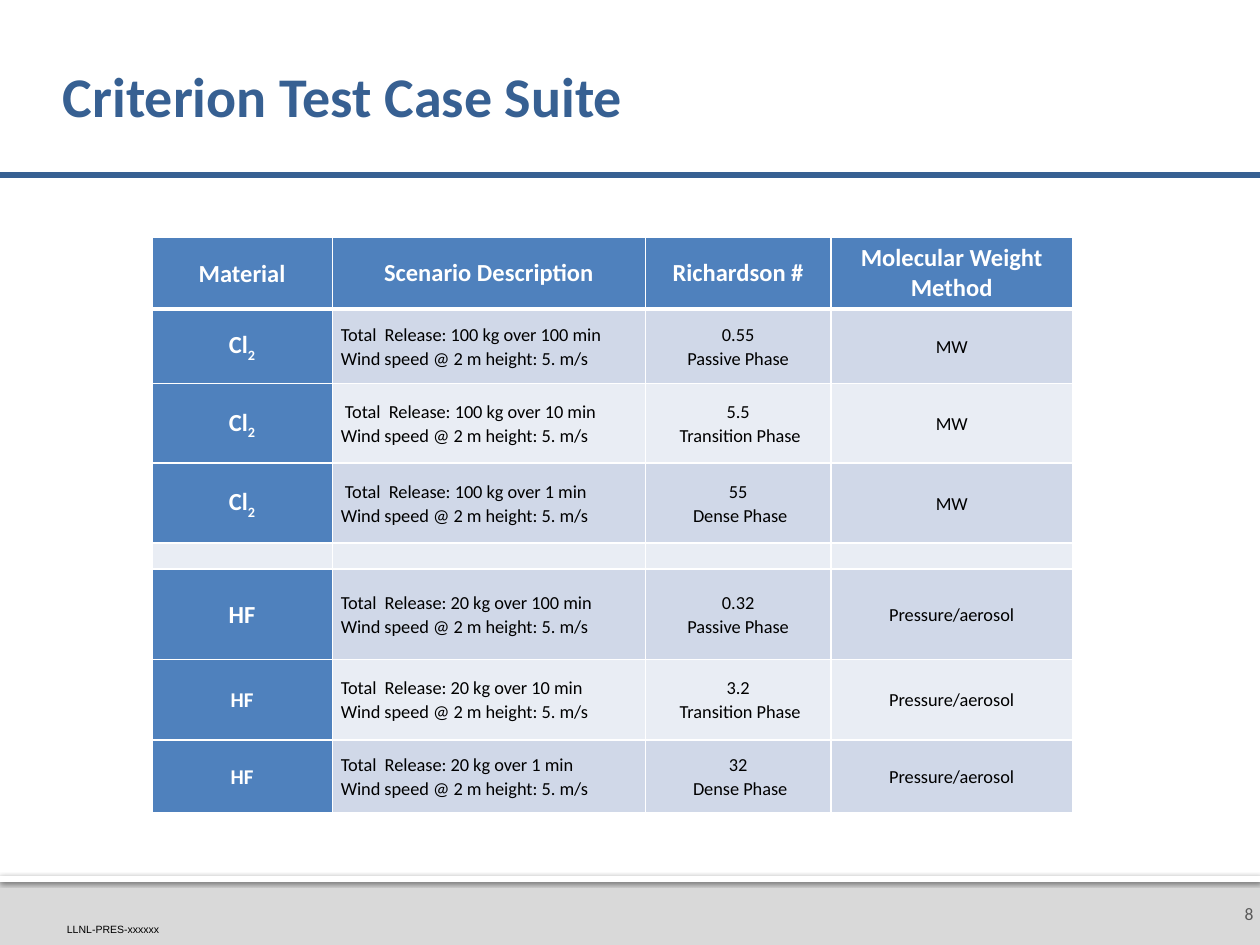
"""Build a slide with the table of criterion test cases."""
from lxml.etree import SubElement as Sub
from pptx import Presentation
from pptx.dml.color import RGBColor as Rgb
from pptx.enum.shapes import MSO_CONNECTOR as Link, MSO_SHAPE as Kind
from pptx.enum.text import MSO_ANCHOR as Anchor, PP_ALIGN as Align
from pptx.oxml.ns import qn
from pptx.util import Cm, Pt

HUES = {"white": "FFFFFF", "black": "000000", "navy": "376092", "head": "4F81BD",
        "dark": "D0D8E8", "light": "E9EDF4", "foot": "D9D9D9", "gray": "595959"}
TITLE = "Criterion Test Case Suite"
HEADS = ["Material", "Scenario Description", "Richardson #", "Molecular Weight Method"]
WIND = "Wind speed @ 2 m height: 5. m/s"
CASES = [
    (1.5, 14, ("Cl", "2"), "Total  Release: 100 kg over 100 min", "0.55", "Passive Phase", "MW"),
    (1.61, 14, ("Cl", "2"), " Total  Release: 100 kg over 10 min", "5.5", " Transition Phase", "MW"),
    (1.61, 14, ("Cl", "2"), " Total  Release: 100 kg over 1 min", "55", " Dense Phase", "MW"),
    None,
    (1.83, 14, ("HF",), "Total  Release: 20 kg over 100 min", "0.32", "Passive Phase",
     "Pressure/aerosol"),
    (1.62, 12, ("HF",), "Total  Release: 20 kg over 10 min", "3.2", " Transition Phase",
     "Pressure/aerosol"),
    (1.47, 12, ("HF",), "Total  Release: 20 kg over 1 min", "32", " Dense Phase",
     "Pressure/aerosol"),
]
WIDTHS = [3.64, 6.31, 3.74, 4.87]
HEAD_H, GAP_H = 1.44, 0.52
PAD, TIGHT = (0.25, 0.13, 0.25, 0.13), (0.17, 0, 0.17, 0)


def tint(name):
    return Rgb.from_string(HUES[name])


def inset(part, pad):
    part.margin_left, part.margin_top, part.margin_right, part.margin_bottom = map(Cm, pad)


def write(frame, lines, size, hue, bold=False, align=Align.LEFT, gap=None, face="Calibri"):
    for i, runs in enumerate(lines):
        para = frame.add_paragraph() if i else frame.paragraphs[0]
        para.alignment = align
        if gap:
            para.line_spacing = gap
        for j, word in enumerate(runs):
            run = para.add_run()
            run.text = word
            font = run.font
            font.size, font.name, font.bold = Pt(size), face, bold
            font.color.rgb = tint(hue)
            if j:
                font._element.set("baseline", "-25000")


def label(slide, box, text, size, hue, anchor, pad, **style):
    frame = slide.shapes.add_textbox(*map(Cm, box)).text_frame
    frame.word_wrap = True
    frame.vertical_anchor = anchor
    inset(frame, pad)
    write(frame, [(text,)], size, hue, **style)


def band(slide, high, hue):
    bar = slide.shapes.add_shape(Kind.RECTANGLE, 0, Cm(17.65), Cm(25.4), Cm(high))
    bar.shadow.inherit = False
    bar.fill.solid()
    bar.fill.fore_color.rgb = tint(hue)
    bar.line.fill.background()
    return bar


def shade(bar):
    glow = Sub(bar._element.spPr.find(qn("a:effectLst")), qn("a:outerShdw"),
               blurRad=str(Pt(2.5)), dist=str(Pt(0.8)), dir="5400000", rotWithShape="0")
    hue = Sub(glow, qn("a:srgbClr"), val=HUES["black"])
    Sub(hue, qn("a:alpha"), val="60000")


def paint(cell, hue, low):
    props = cell._tc.get_or_add_tcPr()
    for side in "LRTB":
        edge = Sub(props, qn(f"a:ln{side}"), w=str(Pt(low if side == "B" else 1)))
        Sub(Sub(edge, qn("a:solidFill")), qn("a:srgbClr"), val=HUES["white"])
    cell.fill.solid()
    cell.fill.fore_color.rgb = tint(hue)
    cell.vertical_anchor = Anchor.MIDDLE


def fill_head(grid):
    for c, text in enumerate(HEADS):
        cell = grid.cell(0, c)
        paint(cell, "head", 3)
        inset(cell, PAD if c else TIGHT)
        write(cell.text_frame, [(text,)], 14, "white", True, Align.CENTER, None if c else 1.07)


def fill_case(grid, r, case):
    cells = [grid.cell(r, c) for c in range(len(WIDTHS))]
    for c, cell in enumerate(cells):
        paint(cell, "head" if case and c == 0 else "dark" if r % 2 else "light", 1)
        inset(cell, TIGHT)
        if not case:
            Sub(cell.text_frame.paragraphs[0]._p, qn("a:endParaRPr"), sz="1050")
    if case:
        _, size, name, load, rich, phase, way = case
        write(cells[0].text_frame, [name], size, "white", True, Align.CENTER, 1.07)
        write(cells[1].text_frame, [(load,), (WIND,)], 10.5, "black", gap=1.07)
        for cell, lines in zip(cells[2:], ([(rich,), (phase,)], [(way,)])):
            write(cell.text_frame, lines, 10.5, "black", False, Align.CENTER, 1.07)


def add_grid(slide):
    highs = [HEAD_H] + [case[0] if case else GAP_H for case in CASES]
    grid = slide.shapes.add_table(len(highs), len(WIDTHS), Cm(3.06), Cm(4.78),
                                  Cm(sum(WIDTHS)), Cm(sum(highs))).table
    for col, wide in zip(grid.columns, WIDTHS):
        col.width = Cm(wide)
    for row, high in zip(grid.rows, highs):
        row.height = Cm(high)
    fill_head(grid)
    for r, case in enumerate(CASES, 1):
        fill_case(grid, r, case)


def main():
    deck = Presentation()
    deck.slide_width, deck.slide_height = Cm(25.4), Cm(19.05)
    slide = deck.slides.add_slide(deck.slide_layouts[6])
    band(slide, 1.4, "foot")
    shade(band(slide, 0.13, "white"))
    label(slide, (24.51, 17.78, 0.89, 1.27), "8", 10, "gray", Anchor.MIDDLE,
          (0.25, 0.13, 0.13, 0.13), align=Align.RIGHT)
    label(slide, (1.35, 18.62, 2.44, 0.25), "LLNL-PRES-xxxxxx", 6, "black", Anchor.BOTTOM,
          (0, 0, 0, 0), face="Arial")
    rule = slide.shapes.add_connector(Link.STRAIGHT, 0, Cm(3.53), Cm(25.4), Cm(3.53))
    rule.line.width = Pt(3)
    rule.line.color.rgb = tint("navy")
    Sub(rule._element.spPr, qn("a:effectLst"))
    label(slide, (1.27, 0.61, 22.86, 2.79), TITLE, 32, "navy", Anchor.MIDDLE,
          (0, 0.13, 0.13, 0.13), bold=True, gap=0.9)
    add_grid(slide)
    deck.save("out.pptx")


if __name__ == "__main__":
    main()
